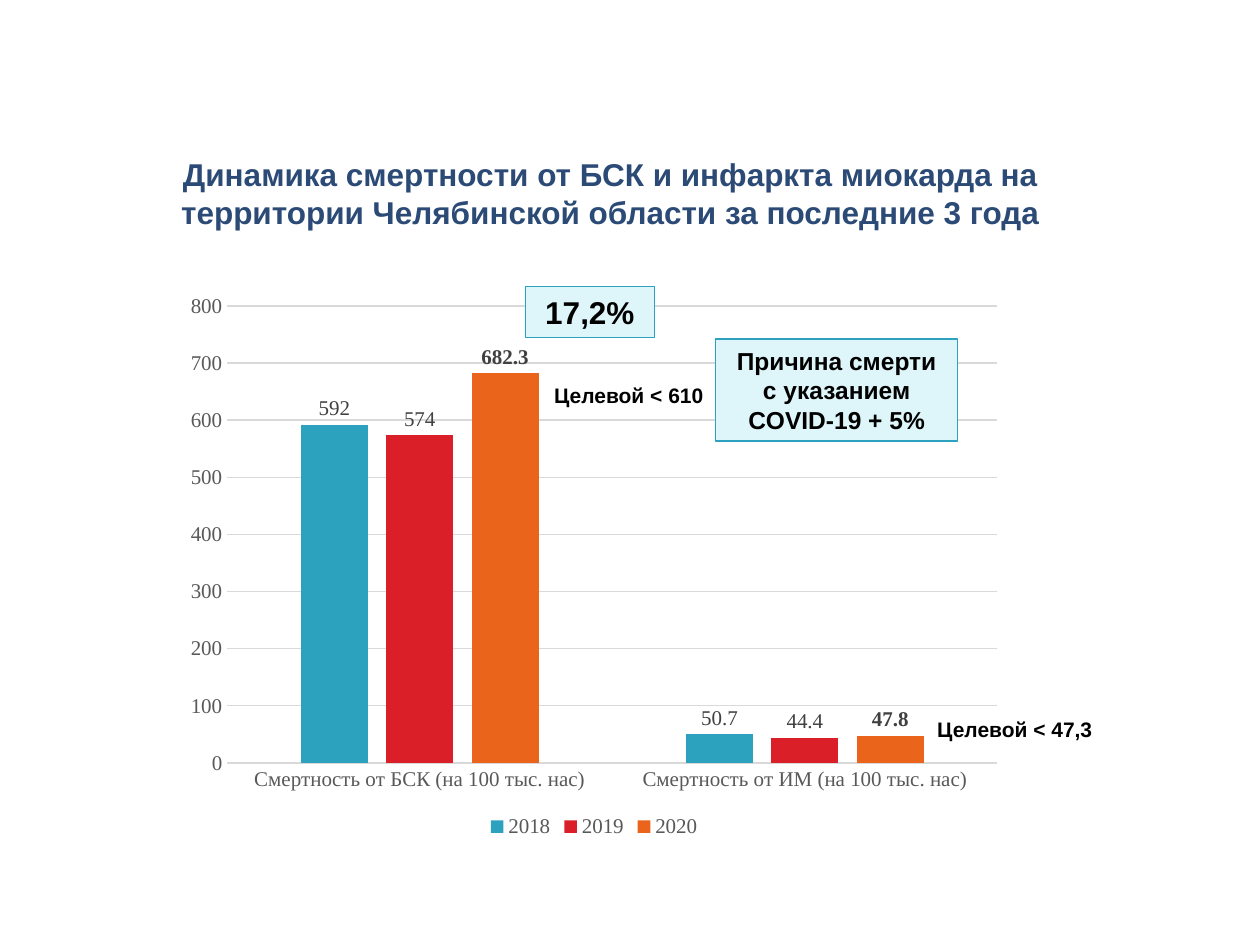
from pptx import Presentation
from pptx.chart.data import CategoryChartData
from pptx.dml.color import RGBColor
from pptx.enum.chart import (XL_CHART_TYPE, XL_LABEL_POSITION,
                             XL_LEGEND_POSITION, XL_TICK_MARK)
from pptx.enum.shapes import MSO_SHAPE
from pptx.enum.text import MSO_ANCHOR, MSO_AUTO_SIZE, PP_ALIGN
from pptx.util import Pt

COLUMN = XL_CHART_TYPE.COLUMN_CLUSTERED
OUTSIDE = XL_LABEL_POSITION.OUTSIDE_END
BOTTOM = XL_LEGEND_POSITION.BOTTOM
NO_TICK = XL_TICK_MARK.NONE
RECT = MSO_SHAPE.RECTANGLE
MIDDLE = MSO_ANCHOR.MIDDLE
GROW = MSO_AUTO_SIZE.SHAPE_TO_FIT_TEXT
LEFT, CENTER = PP_ALIGN.LEFT, PP_ALIGN.CENTER

BLACK = RGBColor(0x00, 0x00, 0x00)
NAVY = RGBColor(0x2B, 0x4A, 0x76)
TEAL = RGBColor(0x2D, 0xA2, 0xBF)
RED = RGBColor(0xDA, 0x1F, 0x28)
ORANGE = RGBColor(0xEB, 0x64, 0x1B)
PALE = RGBColor(0xDE, 0xF5, 0xFA)
GRID = RGBColor(0xD9, 0xD9, 0xD9)
GREY = RGBColor(0x59, 0x59, 0x59)
DARK = RGBColor(0x40, 0x40, 0x40)

CATS = ["Смертность от БСК (на 100 тыс. нас)",
        "Смертность от ИМ (на 100 тыс. нас)"]
YEARS = [
    ("2018", (592, 50.7), TEAL, False),
    ("2019", (574, 44.4), RED, False),
    ("2020", (682.3, 47.8), ORANGE, True),
]


class Deck:
    """Holds the style and the current slide."""
    sans, serif = "Arial", "Times New Roman"
    thin = Pt(0.75)

    def __init__(self, width, height):
        self.prs = Presentation()
        self.prs.slide_width, self.prs.slide_height = Pt(width), Pt(height)
        self.slide = self.prs.slides.add_slide(self.prs.slide_layouts[6])

    def font(self, font, name, size, color, bold=False):
        font.name, font.size, font.bold = name, Pt(size), bold
        font.color.rgb = color

    def stroke(self, line, color):
        line.color.rgb = color
        line.width = self.thin

    def label(self, shape, text, size, color, align, wrap):
        frame = shape.text_frame
        frame.word_wrap = wrap
        frame.auto_size = GROW
        para = frame.paragraphs[0]
        para.text = text
        para.alignment = align
        self.font(para.font, self.sans, size, color, True)

    def text(self, box, text, size, color=BLACK, align=LEFT, wrap=False):
        shape = self.slide.shapes.add_textbox(*map(Pt, box))
        self.label(shape, text, size, color, align, wrap)

    def callout(self, box, text, size):
        shape = self.slide.shapes.add_shape(RECT, *map(Pt, box))
        shape.shadow.inherit = False
        shape.fill.solid()
        shape.fill.fore_color.rgb = PALE
        self.stroke(shape.line, TEAL)
        shape.text_frame.vertical_anchor = MIDDLE
        self.label(shape, text, size, BLACK, CENTER, True)

    def columns(self, box, cats, rows):
        data = CategoryChartData()
        data.categories = cats
        for name, vals, *_ in rows:
            data.add_series(name, vals)
        chart = self.slide.shapes.add_chart(COLUMN, *map(Pt, box), data).chart
        chart.has_title = False
        self.font(chart.font, self.serif, 10, BLACK)

        chart.has_legend = True
        chart.legend.position = BOTTOM
        chart.legend.include_in_layout = False
        self.font(chart.legend.font, self.serif, 12, GREY)

        base, scale = chart.category_axis, chart.value_axis
        for axis in (base, scale):
            axis.major_tick_mark = axis.minor_tick_mark = NO_TICK
            self.font(axis.tick_labels.font, self.serif, 12, GREY)
        self.stroke(base.format.line, GRID)
        scale.format.line.fill.background()
        scale.has_major_gridlines = True
        self.stroke(scale.major_gridlines.format.line, GRID)

        plot = chart.plots[0]
        plot.gap_width, plot.overlap = 219, -27
        plot.vary_by_categories = False
        for series, (_, _, color, bold) in zip(plot.series, rows):
            series.format.fill.solid()
            series.format.fill.fore_color.rgb = color
            series.invert_if_negative = False
            labels = series.data_labels
            labels.show_value = True
            labels.position = OUTSIDE
            self.font(labels.font, self.serif, 12, DARK, bold)


def main():
    deck = Deck(720, 540)
    deck.text((48.2, 85, 601.2, 51.1),
              "Динамика смертности от БСК и инфаркта миокарда на "
              "территории Челябинской области за последние 3 года",
              18, NAVY, CENTER, True)
    deck.columns((99.4, 162, 480.2, 319.7), CATS, YEARS)
    deck.text((309.6, 215.3, 100.8, 21.6), "Целевой < 610", 12)
    deck.text((528.5, 406.1, 103.7, 21.6), "Целевой < 47,3", 12)
    deck.callout((300.2, 163.7, 73.8, 29), "17,2%", 18)
    deck.callout((409, 193.7, 138.2, 58.3),
                 "Причина смерти с указанием COVID-19 + 5%", 14)
    deck.prs.save("out.pptx")


if __name__ == "__main__":
    main()
